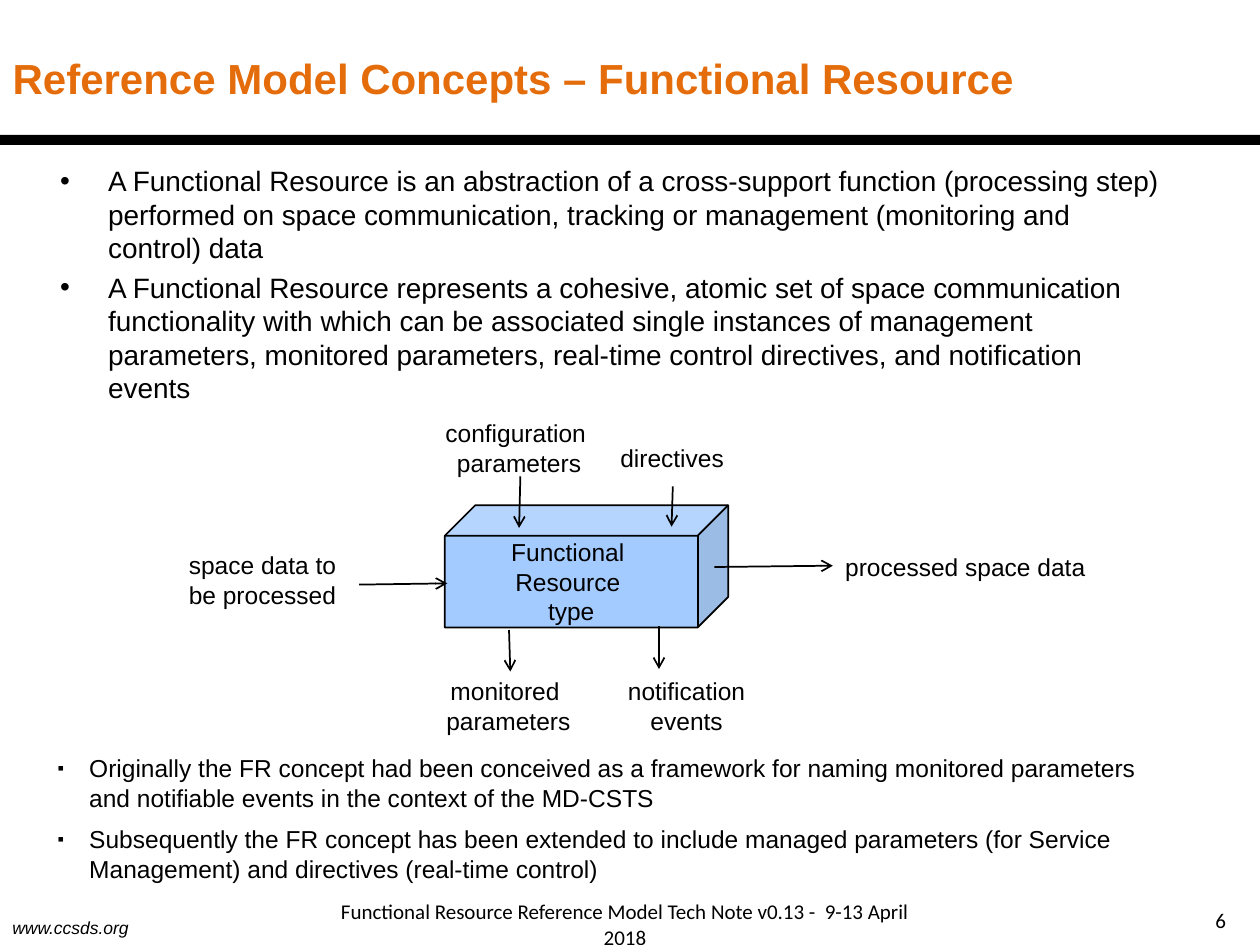
from lxml import etree
from pptx import Presentation
from pptx.dml.color import RGBColor
from pptx.enum.shapes import MSO_CONNECTOR, MSO_SHAPE
from pptx.enum.text import MSO_ANCHOR, MSO_AUTO_SIZE, PP_ALIGN
from pptx.oxml.ns import qn
from pptx.util import Inches, Pt

STRAIGHT = MSO_CONNECTOR.STRAIGHT
RECTANGLE, CUBE = MSO_SHAPE.RECTANGLE, MSO_SHAPE.CUBE
TOP, MIDDLE = MSO_ANCHOR.TOP, MSO_ANCHOR.MIDDLE
LEFT, CENTER, RIGHT = PP_ALIGN.LEFT, PP_ALIGN.CENTER, PP_ALIGN.RIGHT
NO_AUTOFIT = MSO_AUTO_SIZE.NONE

BLACK, WHITE, ORANGE, BLUE = "000000", "FFFFFF", "E46C0A", "4899FF"
COLUMNS, ROWS = 100, 75

TITLE = "Reference Model Concepts – Functional Resource"
DEFINITIONS = [
    "A Functional Resource is an abstraction of a cross-support function (processing step) "
    "performed on space communication, tracking or management (monitoring and control) data",
    "A Functional Resource represents a cohesive, atomic set of space communication "
    "functionality with which can be associated single instances of management parameters, "
    "monitored parameters, real-time control directives, and notification events",
]
HISTORY = [
    "Originally the FR concept had been conceived as a framework for naming monitored "
    "parameters and notifiable events in the context of the MD-CSTS",
    "Subsequently the FR concept has been extended to include managed parameters "
    "(for Service Management) and directives (real-time control)",
]
RESOURCE = ["Functional ", "Resource ", "type"]
FLOWS = [
    (["space data to", "be processed"], (14, 43.2, 14.3, 5.7), LEFT, (28.5, 46.4, 35.5, 46.3)),
    (["processed space data"], (66.1, 43.3, 21.4, 3.4), LEFT, (56.7, 45, 66.1, 44.9)),
    (["configuration ", "parameters"], (34.3, 32.7, 13.8, 5.7), CENTER, (41.3, 37.8, 41.2, 41.9)),
    (["directives"], (48.2, 34.7, 10.3, 3.4), CENTER, (53.4, 38.6, 53.3, 41.8)),
    (["monitored ", "parameters"], (34.4, 53.2, 11.9, 5.7), CENTER, (40.4, 50, 40.5, 53.3)),
    (["notification", "events"], (48.8, 53.2, 11.4, 5.7), CENTER, (52.3, 49.7, 52.3, 53.1)),
]
FOOTER = "Functional Resource Reference Model Tech Note v0.13 -  9-13 April 2018"

prs = Presentation()
prs.slide_width, prs.slide_height = Inches(10), Inches(7.5)
slide = prs.slides.add_slide(prs.slide_layouts[5])


def color(code):
    return RGBColor.from_string(code)


def grid(x1, y1, x2, y2):
    column, row = prs.slide_width / COLUMNS, prs.slide_height / ROWS
    return int(x1 * column), int(y1 * row), int(x2 * column), int(y2 * row)


def add_bullet(paragraph, mark, indent, scale):
    props = paragraph._p.get_or_add_pPr()
    props.set("marL", str(Inches(indent)))
    props.set("indent", str(-Inches(indent)))
    etree.SubElement(props, qn("a:buSzPct")).set("val", str(scale * 1000))
    etree.SubElement(props, qn("a:buFont")).set("typeface", "Arial")
    etree.SubElement(props, qn("a:buChar")).set("char", mark)


def write(shape, lines, size, align=LEFT, anchor=TOP, wrap=True, face="Arial",
          ink=BLACK, bold=False, italic=False, gap=0, bullet=None):
    frame = shape.text_frame
    frame.auto_size = NO_AUTOFIT
    frame.word_wrap = wrap
    frame.vertical_anchor = anchor
    for index, line in enumerate(lines):
        paragraph = frame.add_paragraph() if index else frame.paragraphs[0]
        paragraph.text = line
        paragraph.alignment = align
        if index:
            paragraph.space_before = Pt(gap)
        if bullet:
            add_bullet(paragraph, *bullet)
        font = paragraph.font
        font.name, font.size, font.bold, font.italic = face, Pt(size), bold, italic
        font.color.rgb = color(ink)


def add_text(place, lines, size, **style):
    write(slide.shapes.add_textbox(*grid(*place)), lines, size, **style)


def add_solid(preset, place, fill, opacity=100):
    solid = slide.shapes.add_shape(preset, *grid(*place))
    solid.shadow.inherit = False
    solid.fill.solid()
    solid.fill.fore_color.rgb = color(fill)
    solid.line.fill.background()
    if opacity < 100:
        tint = solid._element.spPr.find(qn("a:solidFill"))[0]
        etree.SubElement(tint, qn("a:alpha")).set("val", str(opacity * 1000))
    return solid


def add_arrow(ends):
    arrow = slide.shapes.add_connector(STRAIGHT, *grid(*ends))
    arrow.line.color.rgb = color(BLACK)
    arrow.line.width = Pt(1)
    etree.SubElement(arrow.line._get_or_add_ln(), qn("a:tailEnd")).set("type", "arrow")
    etree.SubElement(arrow._element.spPr, qn("a:effectLst"))


site = add_solid(RECTANGLE, (0, 72.3, 24.6, 2.7), WHITE, 50)
write(site, ["www.ccsds.org"], 10, anchor=MIDDLE, italic=True)
add_solid(RECTANGLE, (0, 10.7, 100, 0.8), BLACK)

title = slide.shapes.title
title.left, title.top, title.width, title.height = grid(0, 2.8, 81.7, 6.7)
write(title, [TITLE], 24, anchor=MIDDLE, ink=ORANGE, bold=True)

add_text((3.8, 12.5, 90, 20.2), DEFINITIONS, 16, gap=3.2, bullet=("•", 0.38, 100))
add_text((3.6, 59.3, 90, 12), HISTORY, 14, gap=7, bullet=("▪", 0.25, 75))

resource = add_solid(CUBE, (35.3, 40.1, 22.5, 9.7), BLUE, 50)
resource.adjustments[0] = 0.25
resource.line.color.rgb = color(BLACK)
resource.line.width = Pt(1)
write(resource, RESOURCE, 14, align=CENTER, anchor=MIDDLE, wrap=False)

for label, place, align, ends in FLOWS:
    add_text(place, label, 14, align=align, wrap=False)
    add_arrow(ends)

add_text((25, 71.7, 49.2, 3.3), [FOOTER], 12, align=CENTER, anchor=MIDDLE, face="Calibri")
add_text((88.3, 71, 10, 4), ["6"], 12, align=RIGHT, anchor=MIDDLE, face="Calibri")

prs.save("out.pptx")
